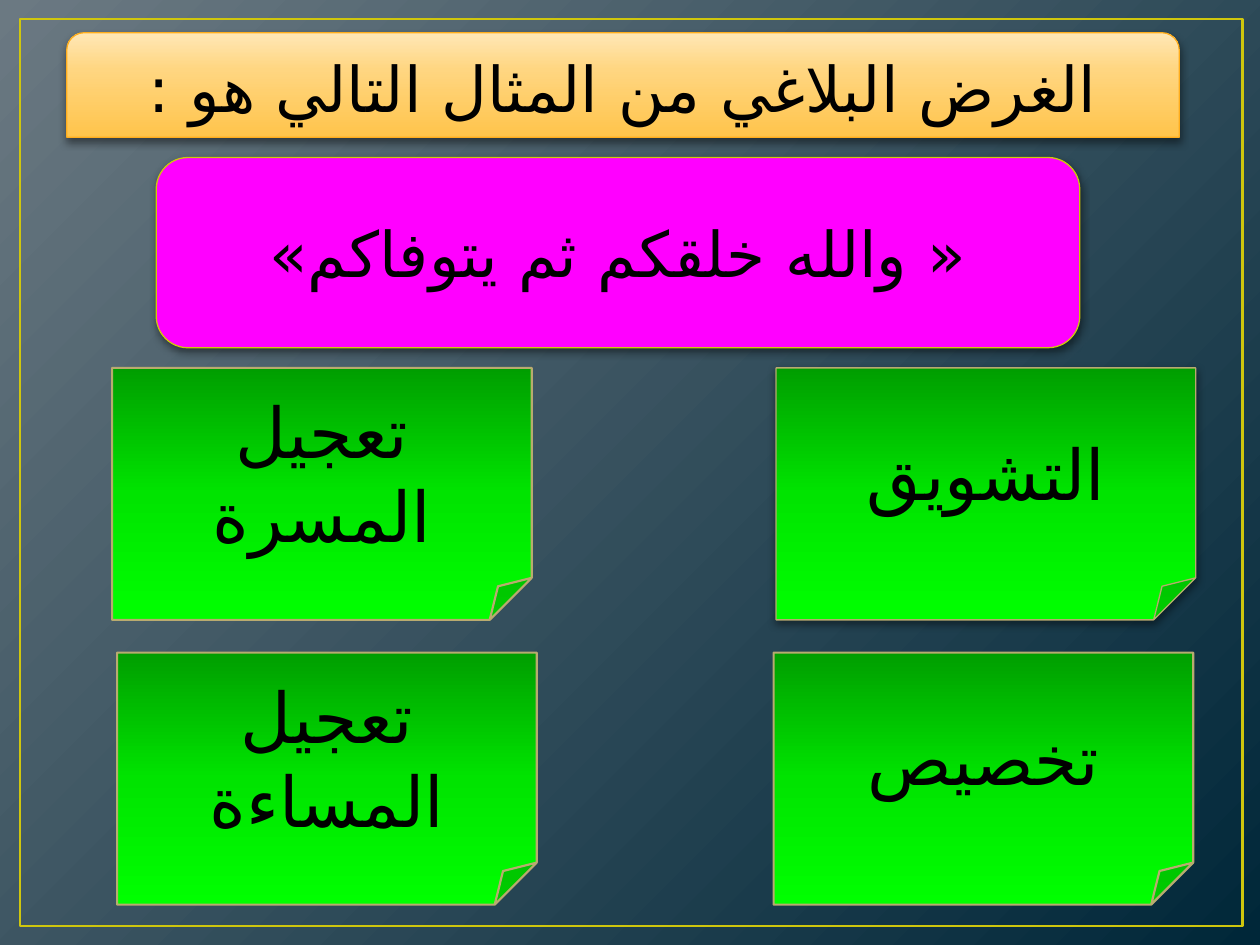
from dataclasses import dataclass
from typing import Optional

from lxml import etree
from pptx import Presentation
from pptx.dml.color import RGBColor
from pptx.enum import shapes, text
from pptx.oxml import ns, parse_xml
from pptx.util import Inches, Pt

KIND = shapes.MSO_SHAPE
Stops = tuple[tuple[int, str], ...]


@dataclass(frozen=True)
class Theme:
    font: str = "TeX Gyre Schola"
    script: str = "DejaVu Sans"
    ink: str = "000000"
    gold: str = "CFC60D"
    amber: str = "FFAD1C"
    sand: str = "B9AB6F"
    pink: str = "FF00FF"
    large: int = 40
    medium: int = 36
    night: Stops = ((0, "6B7982"), (100, "002739"))
    honey: Stops = ((0, "FFC44B"), (65, "FFD681"), (100, "FFE7B6"))
    green: Stops = ((0, "009E00"), (50, "00E400"), (100, "00FF00"))


@dataclass(frozen=True)
class Box:
    left: float
    top: float
    width: float
    height: float

    def emu(self) -> tuple:
        return tuple(map(Inches, (self.left, self.top, self.width, self.height)))


@dataclass(frozen=True)
class Note:
    words: str
    left: float
    top: float
    weight: float = 1.25
    shade: bool = False


THEME = Theme()
NOTES = (
    Note("التشويق", 6.16, 2.92, 0.75, True),
    Note("تعجيل المسرة", 0.89, 2.92),
    Note("تعجيل المساءة", 0.93, 5.18),
    Note("تخصيص", 6.14, 5.18),
)


def blend(stops: Stops, angle: Optional[int] = None):
    marks = "".join(
        f'<a:gs pos="{spot * 1000}"><a:srgbClr val="{color}"/></a:gs>'
        for spot, color in stops
    )
    if angle is None:
        course = '<a:path path="circle"><a:fillToRect r="100000" b="100000"/></a:path>'
    else:
        course = f'<a:lin ang="{angle * 60000}" scaled="0"/>'
    return parse_xml(
        f'<a:gradFill {ns.nsdecls("a")} rotWithShape="1">'
        f"<a:gsLst>{marks}</a:gsLst>{course}</a:gradFill>"
    )


def shift(owner, root, stops: Stops, angle: Optional[int] = None) -> None:
    owner.fill.solid()
    solid = root.xpath("./p:spPr/a:solidFill | .//p:bgPr/a:solidFill")[0]
    solid.getparent().replace(solid, blend(stops, angle))


def edge(shape, color: str, weight: float) -> None:
    shape.line.color.rgb = RGBColor.from_string(color)
    shape.line.width = Pt(weight)


def cast(shape) -> None:
    effects = shape.element.spPr.find(ns.qn("a:effectLst"))
    effects.append(parse_xml(
        f'<a:outerShdw {ns.nsdecls("a")} blurRad="{Pt(5)}" dist="{Pt(2)}" '
        f'dir="5400000" rotWithShape="0"><a:srgbClr val="{THEME.ink}">'
        '<a:alpha val="43000"/></a:srgbClr></a:outerShdw>'
    ))


def write(shape, words: str, size: int) -> None:
    frame = shape.text_frame
    frame.text = words
    frame.word_wrap = True
    frame.auto_size = text.MSO_AUTO_SIZE.NONE
    frame.vertical_anchor = text.MSO_ANCHOR.MIDDLE
    para = frame.paragraphs[0]
    para.alignment = text.PP_ALIGN.CENTER
    para.font.size = Pt(size)
    para.font.name = THEME.font
    para.font.color.rgb = RGBColor.from_string(THEME.ink)
    props = para._p.get_or_add_pPr()
    props.set("rtl", "1")
    face = etree.SubElement(props.find(ns.qn("a:defRPr")), ns.qn("a:cs"))
    face.set("typeface", THEME.script)


def panel(slide, kind, box: Box, color: str, weight: float, shade: bool = False):
    card = slide.shapes.add_shape(kind, *box.emu())
    card.shadow.inherit = False
    edge(card, color, weight)
    if shade:
        cast(card)
    return card


def head(slide) -> None:
    place = Box(0.53, 0.26, 8.83, 0.83)
    card = panel(slide, KIND.ROUND_2_SAME_RECTANGLE, place, THEME.amber, 0.75, True)
    shift(card, card.element, THEME.honey, 270)
    title = slide.shapes.title
    title.left, title.top, title.width, title.height = Box(0.53, 0.3, 8.83, 0.79).emu()
    write(title, "الغرض البلاغي من المثال التالي هو :", THEME.medium)
    card.element.addnext(title.element)


def quote(slide) -> None:
    place = Box(1.24, 1.25, 7.33, 1.51)
    card = panel(slide, KIND.ROUNDED_RECTANGLE, place, THEME.gold, 0.75, True)
    card.fill.solid()
    card.fill.fore_color.rgb = RGBColor.from_string(THEME.pink)
    write(card, "« والله خلقكم ثم يتوفاكم»", THEME.medium)


def answer(slide, note: Note) -> None:
    place = Box(note.left, note.top, 3.33, 2)
    card = panel(
        slide, KIND.FOLDED_CORNER, place, THEME.sand, note.weight, note.shade
    )
    shift(card, card.element, THEME.green, 90)
    write(card, note.words, THEME.large)


def main() -> None:
    deck = Presentation()
    deck.slide_width, deck.slide_height = Inches(10), Inches(7.5)
    slide = deck.slides.add_slide(deck.slide_layouts[5])
    shift(slide.background, slide.element, THEME.night)
    border = panel(slide, KIND.RECTANGLE, Box(0.16, 0.15, 9.7, 7.2), THEME.gold, 1.5)
    border.fill.background()
    head(slide)
    quote(slide)
    for note in NOTES:
        answer(slide, note)
    deck.save("out.pptx")


if __name__ == "__main__":
    main()
